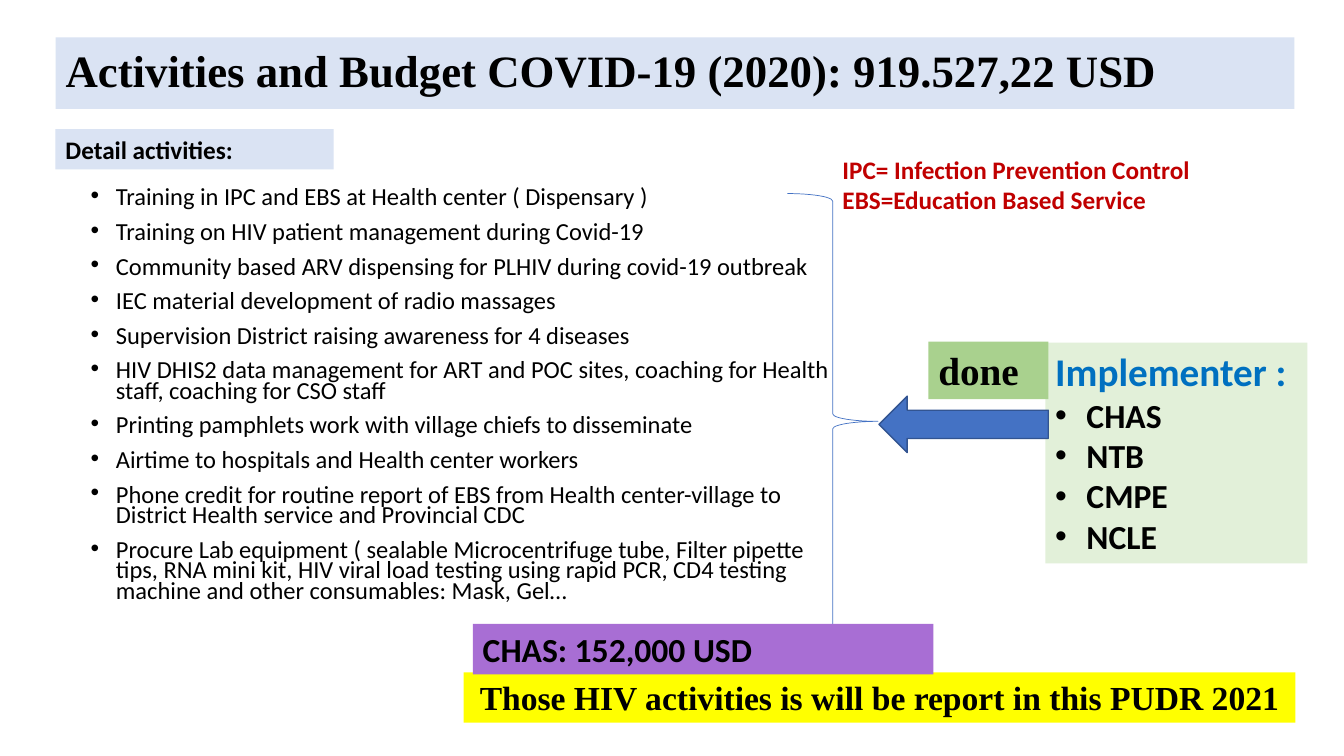
"""Build the slide on COVID-19 activities and budget for 2020."""
from dataclasses import dataclass, field
from typing import Any

from lxml.etree import SubElement
from pptx import Presentation
from pptx.dml.color import RGBColor
from pptx.enum.shapes import MSO_SHAPE
from pptx.enum.text import MSO_ANCHOR, MSO_AUTO_SIZE, PP_ALIGN
from pptx.oxml.ns import qn
from pptx.util import Inches, Pt

COLORS = {
    "black": "000000", "pale blue": "DAE3F3", "pale green": "E2F0D9",
    "green": "A9D18E", "yellow": "FFFF00", "purple": "A86ED4",
    "blue": "4472C4", "dark blue": "325491", "bright blue": "0070C0",
    "red": "C00000",
}
SANS, SERIF = "Calibri", "Times New Roman"
WIDTH, HEIGHT = Inches(13.333), Inches(7.5)


@dataclass(frozen=True)
class Frame:
    """Left, top, width and height in percent of the slide's size."""
    left: float
    top: float
    width: float
    height: float

    def place(self, shape: Any) -> None:
        """Put the shape in this frame."""
        shape.left, shape.width = (int(WIDTH * share / 100) for share in (self.left, self.width))
        shape.top, shape.height = (int(HEIGHT * share / 100) for share in (self.top, self.height))


@dataclass(frozen=True)
class Line:
    """One paragraph with its look."""
    text: str
    size: float
    name: str = SANS
    color: str = "black"
    bold: bool = True
    indent: float = 0
    spacing: dict[str, Any] = field(default_factory=dict)


@dataclass(frozen=True)
class Item:
    """One shape with its fill, outline and text."""
    frame: Frame
    fill: str | None = None
    lines: tuple[Line, ...] = ()
    kind: MSO_SHAPE = MSO_SHAPE.RECTANGLE
    outline: tuple[str, float] | None = None
    margin_left: float = 0.1


ACTIVITIES = (
    "Training in IPC and EBS at Health center ( Dispensary )",
    "Training on HIV patient management during Covid-19",
    "Community based ARV dispensing for PLHIV during covid-19 outbreak",
    "IEC material development of radio massages",
    "Supervision District raising awareness for 4 diseases",
    "HIV DHIS2 data management for ART and POC sites, coaching for Health staff, coaching for CSO staff",
    "Printing pamphlets work with village chiefs to disseminate",
    "Airtime to hospitals and Health center workers",
    "Phone credit for routine report of EBS from Health center-village to "
    "District Health service and Provincial CDC",
    "Procure Lab equipment ( sealable Microcentrifuge tube, Filter pipette tips, RNA mini kit, "
    "HIV viral load testing using rapid PCR, CD4 testing machine and other consumables: Mask, Gel…",
)
IMPLEMENTERS = ("CHAS", "NTB", "CMPE", "NCLE")

TITLE = Item(Frame(4.13, 4.93, 92.18, 9.47), "pale blue", (
    Line("Activities and Budget COVID-19 (2020): 919.527,22 USD", 32, SERIF,
         spacing={"line_spacing": 0.9}),))
BODY = Item(Frame(6, 24.4, 58.05, 63.47), lines=tuple(
    Line(activity, 17.5, bold=False, indent=0.25,
         spacing={"line_spacing": 0.7, "space_before": Pt(10 if index else 0)})
    for index, activity in enumerate(ACTIVITIES)))
ITEMS = (
    Item(Frame(4.13, 17.07, 20.7, 5.33), "pale blue", (Line("Detail activities:", 18),)),
    Item(Frame(77.78, 45.33, 19.5, 29.2), "pale green", (
        Line("Implementer :", 28, color="bright blue"),
        *(Line(name, 24, indent=0.31) for name in IMPLEMENTERS))),
    Item(Frame(65.4, 52.4, 12.6, 7.47), "blue", kind=MSO_SHAPE.LEFT_ARROW,
         outline=("dark blue", 1)),
    Item(Frame(69.08, 45.2, 8.93, 7.6), "green", (Line("done", 28, SERIF),)),
    Item(Frame(58.58, 25.6, 6.75, 60.27), kind=MSO_SHAPE.RIGHT_BRACE, outline=("blue", 0.5)),
    Item(Frame(34.5, 88.93, 61.88, 6.67), "yellow", (
        Line("Those HIV activities is will be report in this PUDR 2021", 24, SERIF),),
        margin_left=0.16),
    Item(Frame(35.18, 82.53, 34.28, 6.67), "purple", (Line("CHAS: 152,000 USD", 24),)),
)
ABBREVIATIONS = Item(Frame(61.95, 19.73, 30, 9.47), lines=tuple(
    Line(text, 18, color="red")
    for text in ("IPC= Infection Prevention Control", "EBS=Education Based Service")))


def color(name: str) -> RGBColor:
    """Return the named color."""
    return RGBColor.from_string(COLORS[name])


def set_all(target: Any, values: dict[str, Any]) -> None:
    """Set each attribute in values on the target."""
    for name, value in values.items():
        setattr(target, name, value)


def add_bullet(paragraph: Any, indent: float) -> None:
    """Give the paragraph a round bullet and a hanging indent."""
    properties = paragraph._p.get_or_add_pPr()
    properties.set("marL", str(Inches(indent)))
    properties.set("indent", str(-Inches(indent)))
    SubElement(properties, qn("a:buFont"), typeface="Arial")
    SubElement(properties, qn("a:buChar"), char="•")


def write(shape: Any, item: Item, anchor: MSO_ANCHOR, auto_size: MSO_AUTO_SIZE) -> None:
    """Write the item's lines into the shape."""
    frame = shape.text_frame
    set_all(frame, {"word_wrap": True, "auto_size": auto_size, "vertical_anchor": anchor,
                    "margin_left": Inches(item.margin_left)})
    for index, line in enumerate(item.lines):
        paragraph = frame.add_paragraph() if index else frame.paragraphs[0]
        if line.indent:
            add_bullet(paragraph, line.indent)
        set_all(paragraph, {"alignment": PP_ALIGN.LEFT, **line.spacing})
        run = paragraph.add_run()
        run.text = line.text
        set_all(run.font, {"size": Pt(line.size), "name": line.name, "bold": line.bold})
        run.font.color.rgb = color(line.color)


def paint(shape: Any, item: Item) -> None:
    """Apply the item's fill and outline to the shape."""
    if item.fill:
        shape.fill.solid()
        shape.fill.fore_color.rgb = color(item.fill)
    else:
        shape.fill.background()
    if item.outline:
        shape.line.color.rgb = color(item.outline[0])
        shape.line.width = Pt(item.outline[1])
    else:
        shape.line.fill.background()


def draw(shape: Any, item: Item, anchor: MSO_ANCHOR = MSO_ANCHOR.TOP,
         auto_size: MSO_AUTO_SIZE = MSO_AUTO_SIZE.SHAPE_TO_FIT_TEXT) -> None:
    """Place, paint and fill in one shape."""
    item.frame.place(shape)
    paint(shape, item)
    if item.lines:
        write(shape, item, anchor, auto_size)


def main() -> None:
    """Build and save the presentation."""
    presentation = Presentation()
    set_all(presentation, {"slide_width": WIDTH, "slide_height": HEIGHT})
    slide = presentation.slides.add_slide(presentation.slide_layouts[1])
    draw(slide.shapes.title, TITLE, MSO_ANCHOR.MIDDLE, MSO_AUTO_SIZE.NONE)
    draw(slide.placeholders[1], BODY, auto_size=MSO_AUTO_SIZE.NONE)
    for item in ITEMS:
        shape = slide.shapes.add_shape(item.kind, 0, 0, 0, 0)
        shape.shadow.inherit = False
        draw(shape, item)
    draw(slide.shapes.add_textbox(0, 0, 0, 0), ABBREVIATIONS)
    presentation.save("out.pptx")


if __name__ == "__main__":
    main()
